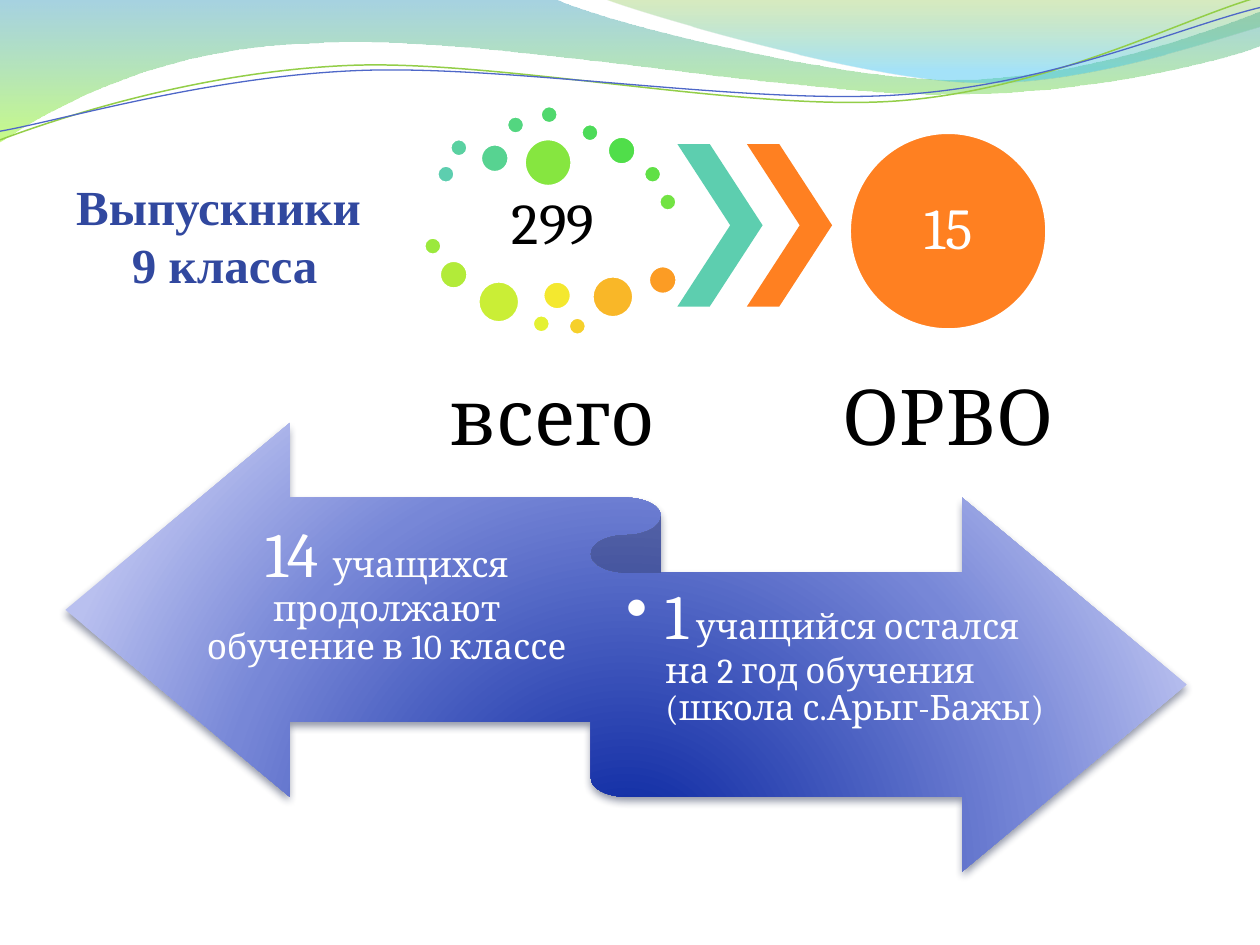
import pptx
import pptx.dml.color
import pptx.enum.shapes
import pptx.enum.text
import pptx.oxml
import pptx.oxml.ns
import pptx.util

Pt = pptx.util.Pt
rgb = pptx.dml.color.RGBColor.from_string
qn = pptx.oxml.ns.qn
SHAPE = pptx.enum.shapes.MSO_SHAPE
ALIGN = pptx.enum.text.PP_ALIGN
ANCHOR = pptx.enum.text.MSO_ANCHOR
NS = pptx.oxml.ns.nsdecls("a")


def paint_gradient(shape, stops, direction):
    """Fill with (percent, colour, opacity percent) stops; direction is the a:lin or a:path XML."""
    stop_xml = "".join(
        f'<a:gs pos="{pos * 1000}"><a:srgbClr val="{colour}">'
        f'<a:alpha val="{opacity * 1000}"/></a:srgbClr></a:gs>'
        for pos, colour, opacity in stops)
    gradient = pptx.oxml.parse_xml(
        f'<a:gradFill {NS} rotWithShape="1"><a:gsLst>{stop_xml}</a:gsLst>{direction}</a:gradFill>')
    shape.fill.background()
    properties = shape._element.spPr
    properties.replace(properties.find(qn("a:noFill")), gradient)


def draw_wave(start, segments, closed):
    """Segments are (x, y) lines or (x1, y1, x2, y2, x, y) Bezier curves, in points."""
    corners = [(Pt(x), Pt(y)) for segment in segments
               for x, y in zip(segment[::2], segment[1::2])]
    builder = slide.shapes.build_freeform(Pt(start[0]), Pt(start[1]))
    builder.add_line_segments(corners, close=closed)
    wave = builder.convert_to_shape()
    wave.shadow.inherit = False
    steps = iter(list(wave._element.iter(qn("a:lnTo"))))
    for segment in segments:
        step = next(steps)
        if len(segment) == 6:
            step.tag = qn("a:cubicBezTo")
            for follower in (next(steps), next(steps)):
                step.append(follower[0])
                follower.getparent().remove(follower)
    return wave


presentation = pptx.Presentation()
presentation.slide_width, presentation.slide_height = Pt(720), Pt(540)
slide = presentation.slides.add_slide(presentation.slide_layouts[6])

# Waves along the top edge
bands = [
    ((0, 0),
     [(316.8, -0.7), (342.7, 12.2, 478.1, 45.4, 545.8, 45.4),
      (614.2, 45.4, 689.8, 18.7, 720, 6.5), (720.7, 25.9),
      (707.8, 31.7, 626.4, 54.7, 537.1, 54), (447.8, 54, 275, 20.2, 185, 24.5),
      (92.9, 25.9, 33.1, 59.8, -0.7, 81.4), (0, 0)],
     [(0, "3B9CBF", 45), (100, "9CFA24", 55)]),
    ((344.9, -0.7),
     [(366.5, 7.9, 491, 44.6, 553.7, 46.8), (616.3, 49.7, 691.9, 23, 720, 15.1),
      (720, 0), (344.9, -0.7)],
     [(0, "7EBE2C", 30), (80, "39C1F1", 45)]),
]
for start, segments, stops in bands:
    band = draw_wave(start, segments, True)
    paint_gradient(band, stops, '<a:lin ang="5400000" scaled="0"/>')
    band.line.fill.background()

strands = [
    ((-1.4, 63),
     [(33.8, 51.7, 114.1, 29.4, 199.8, 29.9), (284.8, 30.3, 425.8, 67.3, 512.4, 64.9),
      (599, 62.4, 676.5, 25.7, 720.2, 15.5)], "93CE48", 0.85),
    ((-1.1, 58),
     [(32.9, 53.8, 118.3, 32.5, 204.1, 33), (290.6, 33.4, 428.9, 63.8, 515.5, 61.4),
      (601.3, 59.6, 676.3, 30, 721.4, 21.3)], "4E67C8", 0.75),
]
for start, segments, colour, width in strands:
    strand = draw_wave(start, segments, False)
    strand.rotation = 357.3
    strand.fill.background()
    strand.line.color.rgb = rgb(colour)
    strand.line.width = Pt(width)

# Two-way ribbon
ribbon = slide.shapes.add_shape(
    SHAPE.LEFT_RIGHT_RIBBON, Pt(37.4), Pt(241.7), Pt(640.6), Pt(256.3))
paint_gradient(
    ribbon, [(0, "011F9D", 100), (68, "7787D7", 100), (100, "B9C0EF", 100)],
    '<a:path path="circle"><a:fillToRect l="50000" t="130000" r="50000" b="-30000"/></a:path>')
ribbon.line.fill.background()
ribbon._element.spPr.append(pptx.oxml.parse_xml(
    f'<a:effectLst {NS}><a:outerShdw blurRad="{Pt(4.5)}" dist="{Pt(3)}" dir="5400000" '
    'rotWithShape="0"><a:srgbClr val="1A2447"><a:alpha val="48000"/></a:srgbClr>'
    '</a:outerShdw></a:effectLst>'))

# Ring of dots around the total, and the circle it leads to
SMALL, MEDIUM, LARGE, LARGEST = 10.5, 16.5, 24, 27.4
circles = [
    (249.6, 94.3, SMALL, "5DCEAF"), (257, 79.2, SMALL, "5AD1A1"),
    (274.5, 82.2, MEDIUM, "57D391"), (289.4, 66.2, SMALL, "53D680"),
    (308.6, 60.3, SMALL, "50D86D"), (331.9, 70.6, SMALL, "4DDB59"),
    (347, 77.8, MEDIUM, "50DE4A"), (367.7, 94.3, SMALL, "60E046"),
    (376.4, 110.2, SMALL, "72E343"), (299.5, 79.2, LARGEST, "86E640"),
    (242.1, 135.4, SMALL, "9BE93C"), (251, 148.7, MEDIUM, "B2EB39"),
    (273, 160.5, LARGE, "CAEE36"), (304.1, 179.8, SMALL, "E4F132"),
    (310.1, 160.6, MEDIUM, "F4E82F"), (324.7, 181.2, SMALL, "F6D02B"),
    (338.2, 157.6, LARGE, "F9B728"), (370.5, 151.8, MEDIUM, "FC9C24"),
    (485.3, 75.6, 113, "FF8021"),
]
for left, top, size, colour in circles:
    circle = slide.shapes.add_shape(SHAPE.OVAL, Pt(left), Pt(top), Pt(size), Pt(size))
    circle.shadow.inherit = False
    circle.fill.solid()
    circle.fill.fore_color.rgb = rgb(colour)
    circle.line.color.rgb = rgb("FFFFFF")
    circle.line.width = Pt(2)

for left, colour in [(387.1, "5DCEAF"), (426.8, "FF8021")]:
    chevron = slide.shapes.add_shape(SHAPE.CHEVRON, Pt(left), Pt(82.3), Pt(48.7), Pt(92.9))
    chevron.adjustments[0] = 0.62
    chevron.shadow.inherit = False
    chevron.fill.solid()
    chevron.fill.fore_color.rgb = rgb(colour)
    chevron.line.fill.background()

# Title: the two lines share one paragraph
title = slide.shapes.add_textbox(Pt(14.4), Pt(94.5), Pt(221), Pt(73.4)).text_frame
title.word_wrap = True
title.vertical_anchor = ANCHOR.BOTTOM
title.margin_left = title.margin_right = title.margin_bottom = 0
heading = title.paragraphs[0]
heading.alignment = ALIGN.CENTER
for wording in ["Выпускники", " 9 класса"]:
    if heading.runs:
        heading.add_line_break()
    run = heading.add_run()
    run.text = wording
    run.font.name, run.font.size, run.font.bold = "Times New Roman", Pt(28), True
    run.font.color.rgb = rgb("31489F")

# Captions: box, top and bottom inset, side inset, colour, bulleted, runs
captions = [
    ((115.2, 277.4, 211.5, 125.3), (10.1, 10.4), 0, "FFFFFF", False,
     [("14 ", 36), ("учащихся продолжают обучение в 10 классе", 20)]),
    ((357.8, 277.2, 249.8, 159.1), (44, 7.2), 0, "FFFFFF", True,
     [("1", 36), (" учащийся остался на 2 год обучения (школа с.Арыг-Бажы)", 20)]),
    ((249.8, 107.3, 132.5, 43.9), (3.6, 3.6), 3.6, "000000", False, [("299", 33)]),
    ((249.8, 199.4, 132.5, 82.1), (4.3, 4.3), 4.3, "000000", False, [("всего", 44)]),
    ((502, 91.9, 79.9, 79.9), (0, 0), 0, "FFFFFF", False, [("15", 33)]),
    ((475.6, 199.4, 132.5, 82.1), (4.3, 4.3), 4.3, "000000", False, [("ОРВО", 44)]),
]
for box, (inset_top, inset_bottom), inset_side, colour, bulleted, runs in captions:
    caption = slide.shapes.add_textbox(*map(Pt, box)).text_frame
    caption.word_wrap = True
    caption.vertical_anchor = ANCHOR.MIDDLE
    caption.margin_top, caption.margin_bottom = Pt(inset_top), Pt(inset_bottom)
    caption.margin_left = caption.margin_right = Pt(inset_side)
    paragraph = caption.paragraphs[0]
    paragraph.line_spacing = 0.9
    paragraph.alignment = ALIGN.LEFT if bulleted else ALIGN.CENTER
    if bulleted:
        layout = paragraph._p.get_or_add_pPr()
        layout.set("marL", str(Pt(22.5)))
        layout.set("indent", str(Pt(-22.5)))
        layout.append(pptx.oxml.parse_xml(f'<a:buChar {NS} char="•"/>'))
    for wording, size in runs:
        run = paragraph.add_run()
        run.text = wording
        run.font.name, run.font.size = "Cambria", Pt(size)
        run.font.color.rgb = rgb(colour)

presentation.save("out.pptx")
